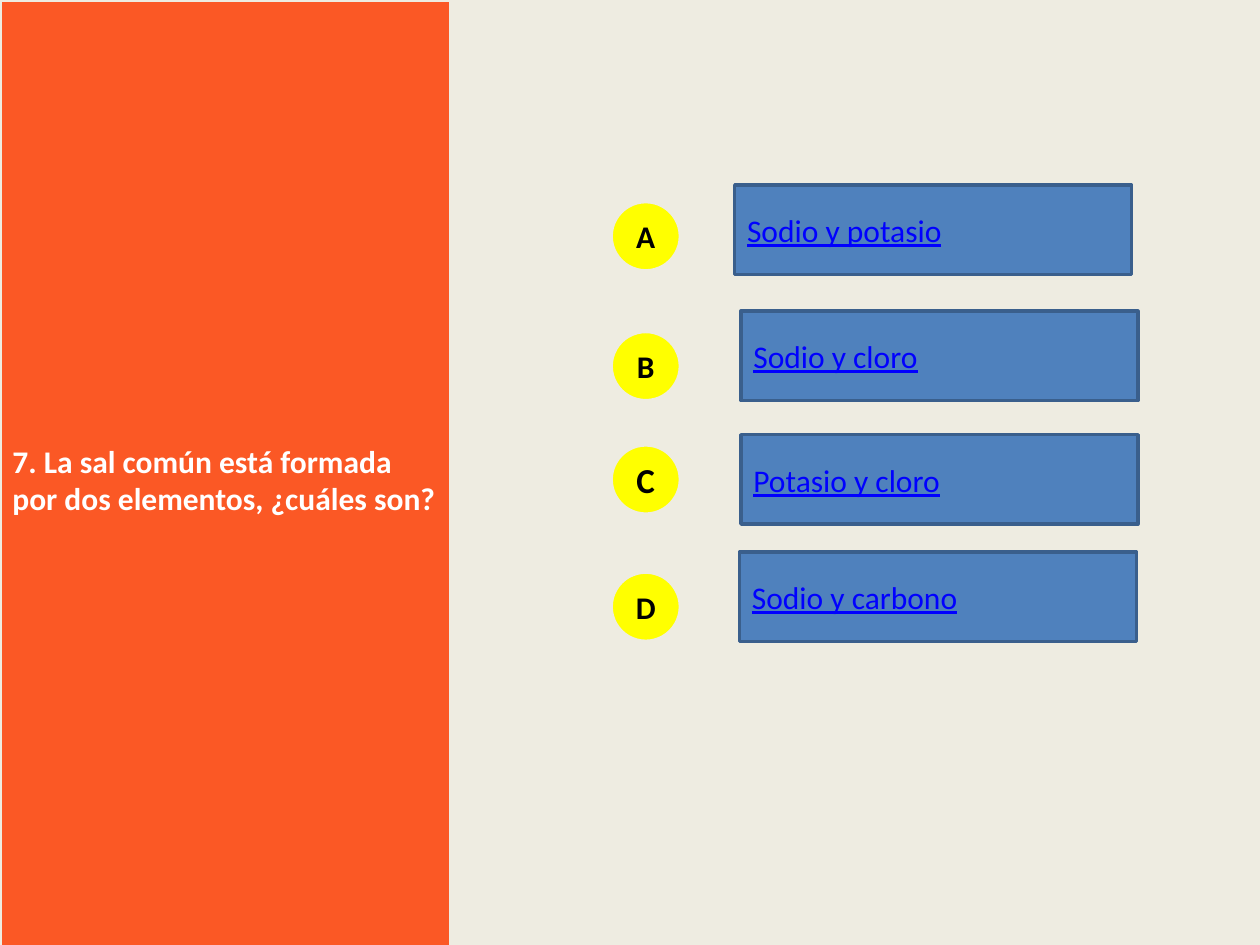
from dataclasses import dataclass

from pptx import Presentation
from pptx.dml.color import RGBColor
from pptx.enum.shapes import MSO_SHAPE
from pptx.enum.text import MSO_ANCHOR, PP_ALIGN
from pptx.util import Pt

RECTANGLE = MSO_SHAPE.RECTANGLE
OVAL = MSO_SHAPE.OVAL
MIDDLE = MSO_ANCHOR.MIDDLE
LEFT = PP_ALIGN.LEFT
CENTER = PP_ALIGN.CENTER

COLORS = {
    "background": "EEECE1",
    "panel": "FB5825",
    "question": "FFFFFF",
    "answer": "4F81BD",
    "answer_border": "3A5F8C",
    "answer_text": "0000FF",
    "badge": "FFFF00",
    "letter": "000000",
}
FONT = "Calibri"
BORDER = 2
ANSWER_WIDTH, ANSWER_HEIGHT = 226.8, 51.1
BADGE_LEFT, BADGE_SIZE = 349.2, 39.6


@dataclass(frozen=True)
class Style:
    fill: str
    border: str
    text: str
    bold: bool = False
    underline: bool = False
    align: PP_ALIGN = LEFT


@dataclass(frozen=True)
class Option:
    letter: str
    answer: str
    answer_left: float
    answer_top: float
    badge_top: float
    letter_size: float = 18


PANEL = Style("panel", "background", "question", bold=True)
ANSWER = Style("answer", "answer_border", "answer_text", underline=True)
BADGE = Style("badge", "background", "letter", bold=True, align=CENTER)

OPTIONS = [
    Option("A", "Sodio y potasio", 419.8, 105.8, 115.2),
    Option("B", "Sodio y cloro", 423.4, 177.8, 189.4),
    Option("C", "Potasio y cloro", 423.4, 248.4, 254.2, letter_size=20),
    Option("D", "Sodio y carbono", 422.6, 315.4, 326.9),
]


def color(key: str) -> RGBColor:
    return RGBColor.from_string(COLORS[key])


def draw_box(slide, kind: MSO_SHAPE, left: float, top: float, width: float,
             height: float, text: str, style: Style, size: float = 18) -> None:
    box = slide.shapes.add_shape(kind, Pt(left), Pt(top), Pt(width), Pt(height))
    box.shadow.inherit = False
    box.fill.solid()
    box.fill.fore_color.rgb = color(style.fill)
    box.line.color.rgb = color(style.border)
    box.line.width = Pt(BORDER)

    frame = box.text_frame
    frame.word_wrap = True
    frame.vertical_anchor = MIDDLE
    paragraph = frame.paragraphs[0]
    paragraph.alignment = style.align
    run = paragraph.add_run()
    run.text = text
    run.font.name = FONT
    run.font.size = Pt(size)
    run.font.bold = style.bold
    run.font.underline = style.underline
    run.font.color.rgb = color(style.text)


def draw_option(slide, option: Option) -> None:
    draw_box(slide, RECTANGLE, option.answer_left, option.answer_top,
             ANSWER_WIDTH, ANSWER_HEIGHT, option.answer, ANSWER)
    draw_box(slide, OVAL, BADGE_LEFT, option.badge_top, BADGE_SIZE, BADGE_SIZE,
             option.letter, BADGE, option.letter_size)


def main() -> None:
    deck = Presentation()
    deck.slide_width, deck.slide_height = Pt(720), Pt(540)
    slide = deck.slides.add_slide(deck.slide_layouts[6])

    # Background
    slide.background.fill.solid()
    slide.background.fill.fore_color.rgb = color("background")

    # Question panel
    draw_box(slide, RECTANGLE, 0, 0, 257.8, 547.9,
             "7. La sal común está formada por dos elementos, ¿cuáles son?", PANEL)

    # Answer options with their letters
    for option in OPTIONS:
        draw_option(slide, option)

    deck.save("out.pptx")


if __name__ == "__main__":
    main()
